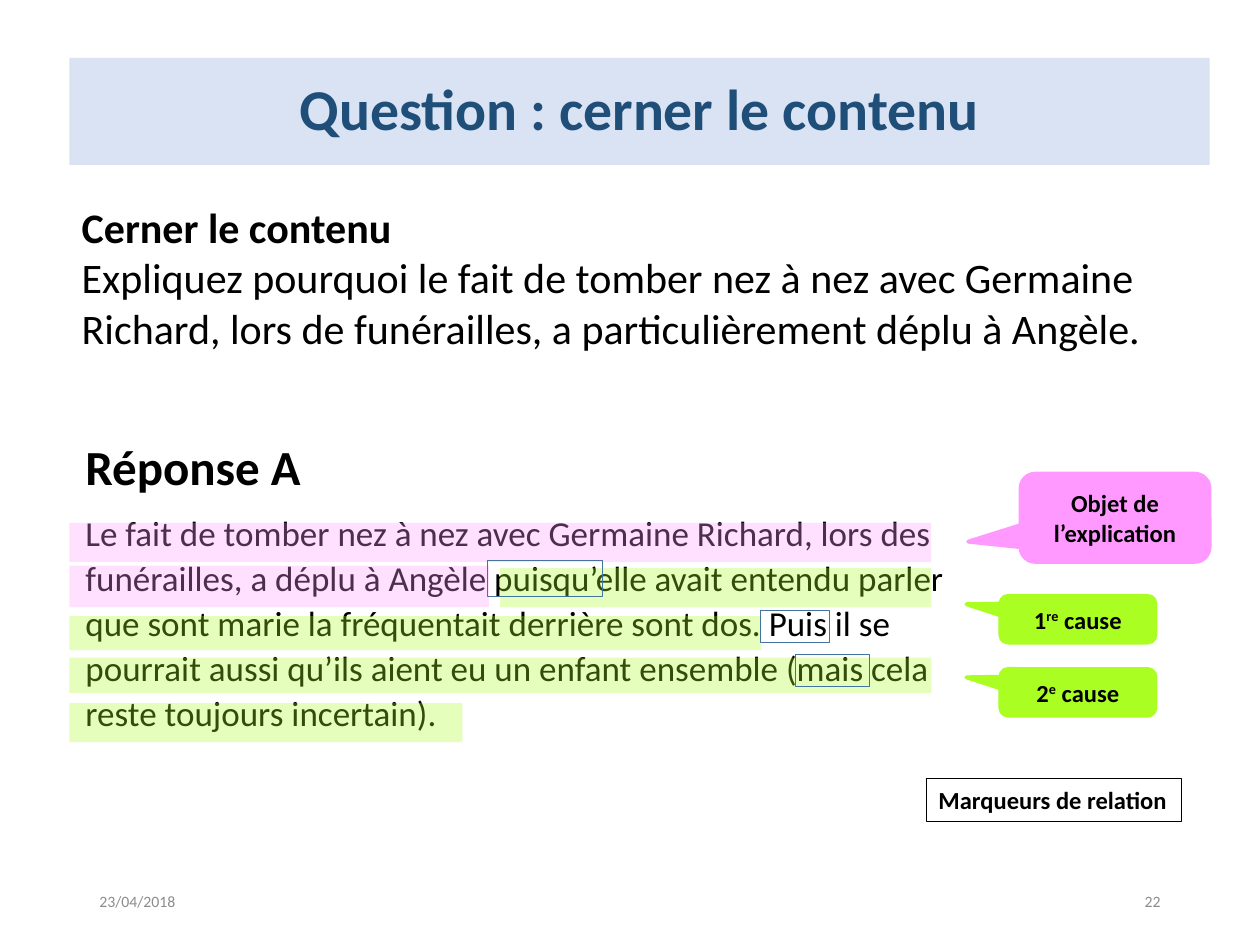
import pptx
import pptx.util
import pptx.dml.color
import pptx.enum.shapes
import pptx.enum.text

Inches = pptx.util.Inches
Pt = pptx.util.Pt
color = pptx.dml.color.RGBColor.from_string
SHAPE = pptx.enum.shapes.MSO_SHAPE
ALIGN = pptx.enum.text.PP_ALIGN
ANCHOR = pptx.enum.text.MSO_ANCHOR
AUTO_SIZE = pptx.enum.text.MSO_AUTO_SIZE

PINK, GREEN, BLACK = "FF99FF", "AAFE22", "000000"

deck = pptx.Presentation()
deck.slide_width = Inches(10)
deck.slide_height = Inches(7.5)
page = deck.slides.add_slide(deck.slide_layouts[6])


def add_box(kind, area, fill=None, line=None, line_width=1, opacity=None):
    """Add a preset shape with an optional fill, outline and opacity in percent."""
    box = page.shapes.add_shape(kind, *map(Inches, area))
    box.shadow.inherit = False
    if fill:
        box.fill.solid()
        box.fill.fore_color.rgb = color(fill)
    else:
        box.fill.background()
    if opacity:
        fill_color = box.fill._xPr.solidFill[0]
        alpha = pptx.oxml.parse_xml(
            '<a:alpha xmlns:a="http://schemas.openxmlformats.org/drawingml/2006/main"'
            f' val="{opacity * 1000}"/>')
        fill_color.append(alpha)
    if line:
        box.line.color.rgb = color(line)
        box.line.width = Pt(line_width)
    else:
        box.line.fill.background()
    return box


def write(box, lines, align=ALIGN.LEFT, anchor=ANCHOR.MIDDLE, ink=BLACK):
    """Write (text, size, bold) lines; text between ^ marks is superscript."""
    frame = box.text_frame
    frame.word_wrap = True
    frame.vertical_anchor = anchor
    for index, (text, size, bold) in enumerate(lines):
        para = frame.add_paragraph() if index else frame.paragraphs[0]
        para.alignment = align
        for position, part in enumerate(text.split("^")):
            span = para.add_run()
            span.text = part
            span.font.name = "Calibri"
            span.font.size = Pt(size)
            span.font.bold = bold
            span.font.color.rgb = color(ink)
            if position % 2:
                span._r.get_or_add_rPr().set("baseline", "30000")
    return frame


# Date and page number
for left, text, align in ((0.69, "23/04/2018", ALIGN.LEFT), (7.06, "22", ALIGN.RIGHT)):
    footer = page.shapes.add_textbox(*map(Inches, (left, 6.95, 2.25, 0.4)))
    write(footer, [(text, 9, False)], align, ink="8C8C8C")

# Title band
title = add_box(SHAPE.RECTANGLE, (0.55, 0.46, 9.05, 0.85), "DAE3F3")
frame = write(title, [("Question : cerner le contenu", 33, True)], ALIGN.CENTER, ink="1F4E79")
frame.paragraphs[0].line_spacing = 0.9

# Question
question = page.shapes.add_textbox(*map(Inches, (0.55, 1.55, 9.05, 1.31)))
frame = write(question, [
    ("Cerner le contenu", 24, True),
    ("Expliquez pourquoi le fait de tomber nez à nez avec Germaine Richard, "
     "lors de funérailles, a particulièrement déplu à Angèle.", 24, False),
], anchor=ANCHOR.TOP)
frame.auto_size = AUTO_SIZE.SHAPE_TO_FIT_TEXT

# Answer
answer = page.shapes.add_textbox(*map(Inches, (0.58, 3.38, 7.36, 2.52)))
frame = write(answer, [
    ("Réponse A", 28, True),
    ("Le fait de tomber nez à nez avec Germaine Richard, lors des funérailles, "
     "a déplu à Angèle puisqu’elle avait entendu parler que sont marie la "
     "fréquentait derrière sont dos. Puis il se pourrait aussi qu’ils aient eu "
     "un enfant ensemble (mais cela reste toujours incertain).", 20, False),
], anchor=ANCHOR.TOP)
frame.auto_size = AUTO_SIZE.SHAPE_TO_FIT_TEXT
for para in frame.paragraphs:
    para.line_spacing = 1.07
    para.space_after = Pt(8)

# Highlighter strips over the answer
for fill, *area in (
    (PINK, 0.55, 4.15, 6.84, 0.31),
    (PINK, 0.55, 4.49, 3.33, 0.33),
    (GREEN, 3.97, 4.51, 3.42, 0.31),
    (GREEN, 0.55, 4.89, 5.49, 0.27),
    (GREEN, 0.55, 5.22, 6.84, 0.28),
    (GREEN, 0.55, 5.58, 3.12, 0.31),
):
    add_box(SHAPE.RECTANGLE, area, fill, opacity=30)

# Callouts naming the highlighted parts
cause_tail = (-0.72, -0.322)
for text, fill, area, tail in (
    ("Objet de l’explication", PINK, (8.1, 3.76, 1.5, 0.7), (-0.777, 0.271)),
    ("1^re^ cause", GREEN, (7.94, 4.73, 1.23, 0.37), cause_tail),
    ("2^e^ cause", GREEN, (7.94, 5.31, 1.23, 0.37), cause_tail),
):
    callout = add_box(SHAPE.ROUNDED_RECTANGULAR_CALLOUT, area, fill, fill, 2.25)
    callout.adjustments[0], callout.adjustments[1] = tail
    write(callout, [(text, 14, True)], ALIGN.CENTER)

# Frames around the linking words
for area in ((3.87, 4.45, 0.91, 0.28), (6.03, 4.84, 0.55, 0.26), (6.31, 5.19, 0.59, 0.26)):
    add_box(SHAPE.RECTANGLE, area, line="43739E", line_width=0.25)

# Legend for the linking words
legend = page.shapes.add_textbox(*map(Inches, (7.35, 6.18, 2.03, 0.34)))
legend.line.color.rgb = color(BLACK)
legend.line.width = Pt(0.5)
frame = write(legend, [("Marqueurs de relation", 14, True)], anchor=ANCHOR.TOP)
frame.word_wrap = False
frame.auto_size = AUTO_SIZE.SHAPE_TO_FIT_TEXT

deck.save("out.pptx")
